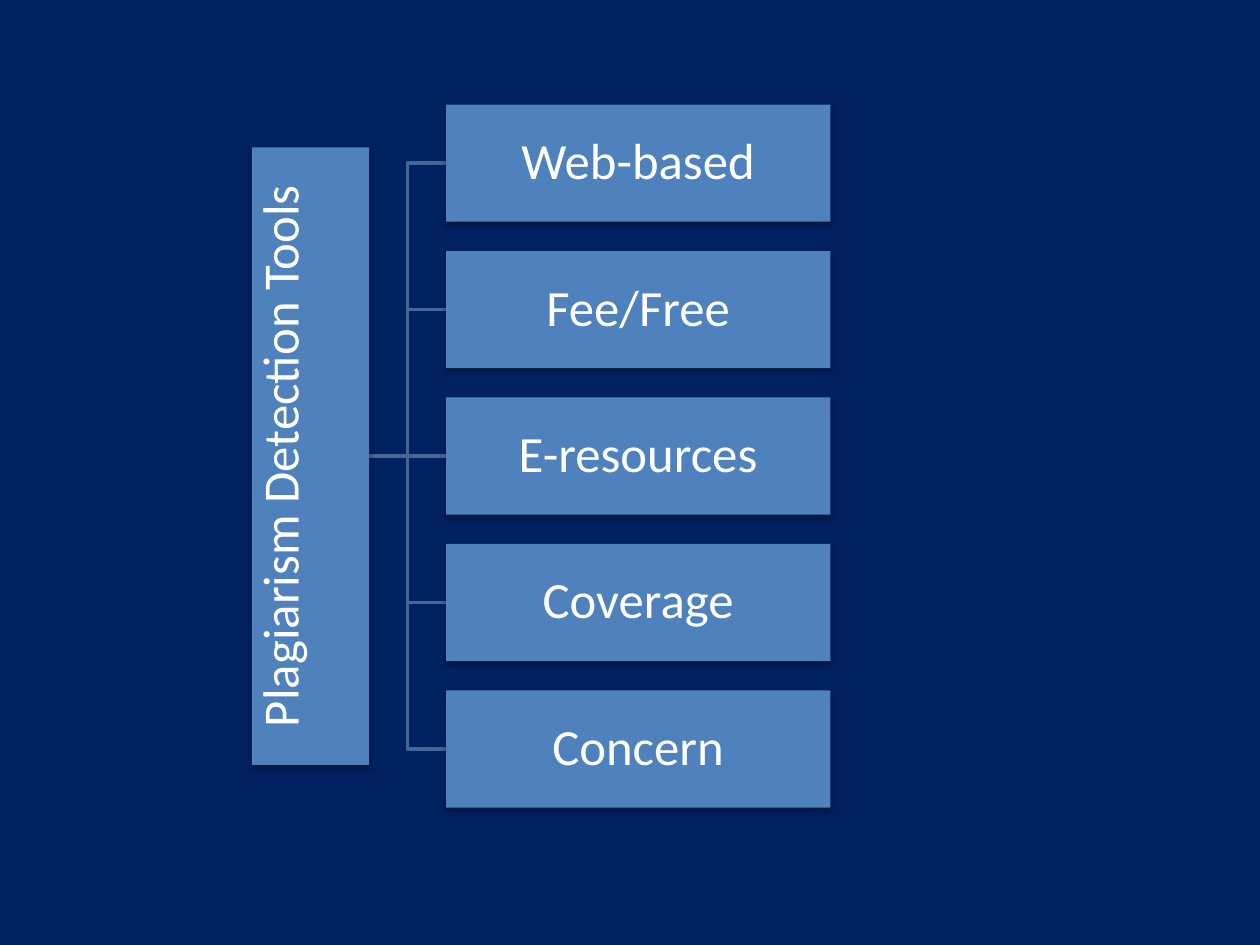
from lxml import etree
from pptx import Presentation
from pptx.dml.color import RGBColor as RGB
from pptx.enum.shapes import MSO_CONNECTOR as LINK, MSO_SHAPE as SHAPE
from pptx.enum.text import MSO_ANCHOR as ANCHOR, PP_ALIGN as ALIGN
from pptx.oxml import parse_xml
from pptx.oxml.ns import nsdecls, qn
from pptx.util import Inches, Pt

HUES = {"back": "002060", "box": "4F81BD", "line": "3F6797", "text": "FFFFFF"}
ROOT = "Plagiarism Detection Tools"
ITEMS = ["Web-based", "Fee/Free", "E-resources", "Coverage", "Concern"]


def hue(name):
    return RGB.from_string(HUES[name])


def add_shade(shape):
    shape._element.spPr.append(parse_xml(
        f'<a:effectLst {nsdecls("a")}>'
        '<a:outerShdw blurRad="40000" dist="23000" dir="5400000" rotWithShape="0">'
        '<a:srgbClr val="000000"><a:alpha val="35000"/></a:srgbClr>'
        '</a:outerShdw></a:effectLst>'))


def add_box(slide, left, top, width, height, text, turn=0, foot=0.02):
    box = slide.shapes.add_shape(
        SHAPE.RECTANGLE, Inches(left), Inches(top), Inches(width), Inches(height))
    box.rotation = turn
    box.fill.solid()
    box.fill.fore_color.rgb = hue("box")
    box.line.fill.background()
    add_shade(box)
    frame = box.text_frame
    frame.word_wrap = True
    frame.vertical_anchor = ANCHOR.MIDDLE
    frame.margin_left = frame.margin_right = frame.margin_top = Inches(0.02)
    frame.margin_bottom = Inches(foot)
    frame.text = text
    para = frame.paragraphs[0]
    para.alignment = ALIGN.CENTER
    para.line_spacing = 0.9
    font = para.runs[0].font
    font.name = "Calibri"
    font.size = Pt(29)
    font.color.rgb = hue("text")


def add_link(slide, left, start, right, end):
    x1, y1, x2, y2 = (Inches(v) for v in (left, start, right, end))
    if start == end:
        link = slide.shapes.add_connector(LINK.STRAIGHT, x1, y1, x2, y2)
    else:
        mid = (x1 + x2) // 2
        path = slide.shapes.build_freeform(x1, y1)
        path.add_line_segments([(mid, y1), (mid, y2), (x2, y2)], close=False)
        link = path.convert_to_shape()
        link.fill.background()
    link.line.color.rgb = hue("line")
    link.line.width = Pt(2)
    etree.SubElement(link._element.spPr, qn("a:effectLst"))


def add_tree(slide, left, top, width, height):
    thick, reach, gap = 0.93, 4.9, 0.61
    step = (height - thick) / (len(ITEMS) - 1)
    mid = top + height / 2
    edge = left + thick
    column = edge + gap
    tops = [top + i * step for i in range(len(ITEMS))]
    hub = len(ITEMS) // 2
    for i, y in enumerate(tops):
        add_link(slide, edge, mid, column, mid if i == hub else y + thick / 2)
    add_box(slide, left + (thick - reach) / 2, mid - thick / 2,
            reach, thick, ROOT, turn=270, foot=0.47)
    for y, text in zip(tops, ITEMS):
        add_box(slide, column, y, left + width - column, thick, text)


def main():
    deck = Presentation()
    deck.slide_width, deck.slide_height = Inches(10), Inches(7.5)
    slide = deck.slides.add_slide(deck.slide_layouts[6])
    fill = slide.background.fill
    fill.solid()
    fill.fore_color.rgb = hue("back")
    add_tree(slide, 2, 0.83, 4.59, 5.58)
    deck.save("out.pptx")


if __name__ == "__main__":
    main()
